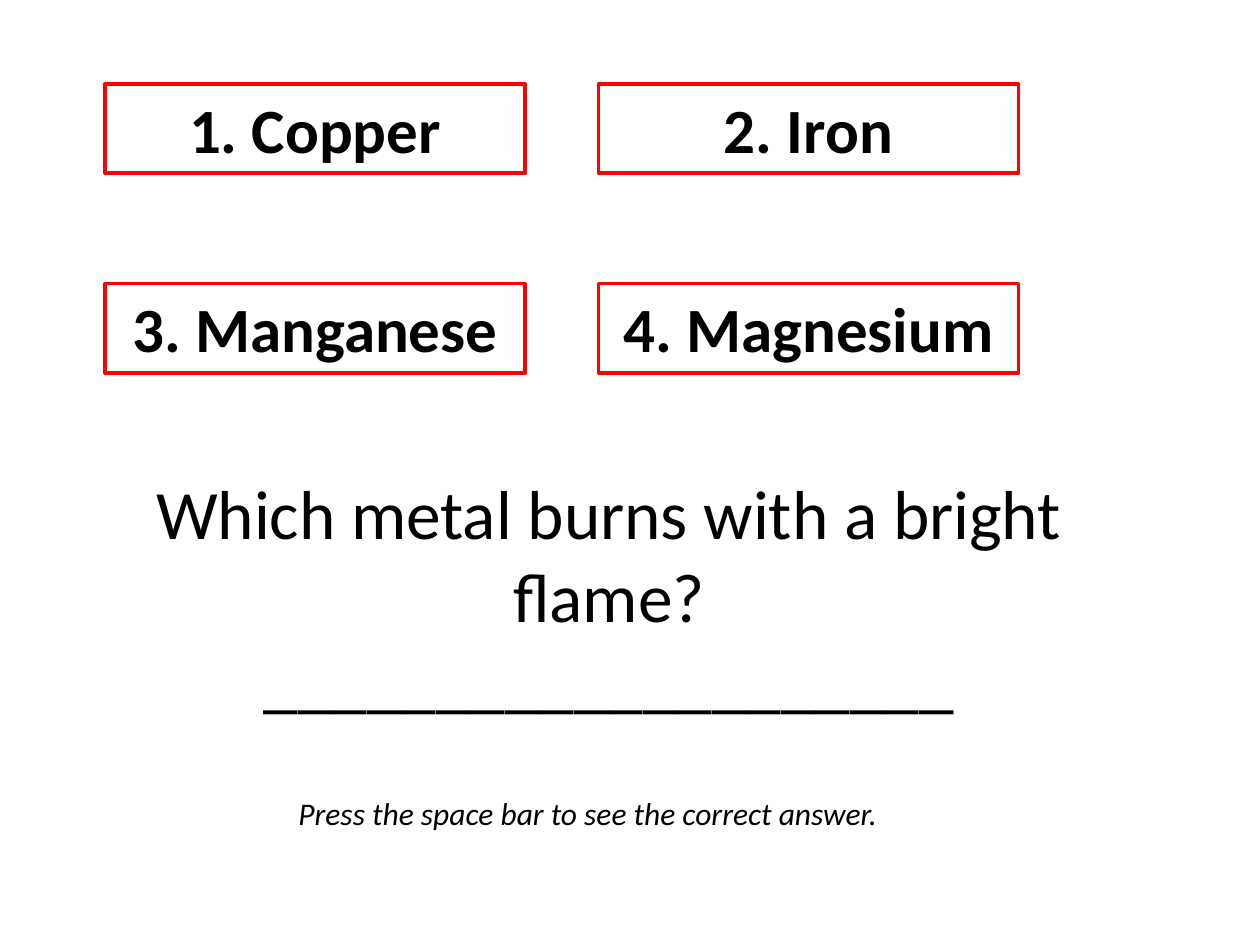
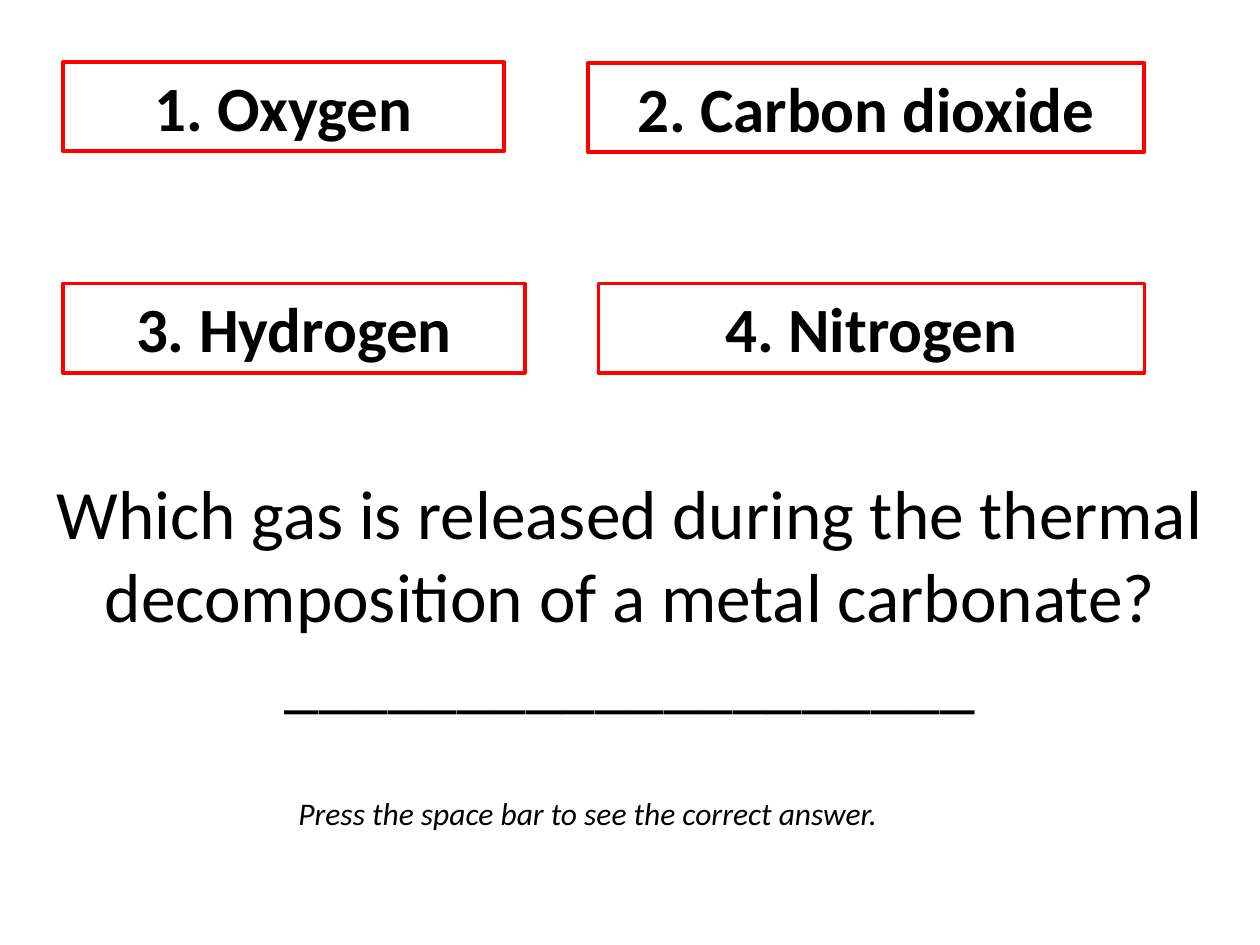
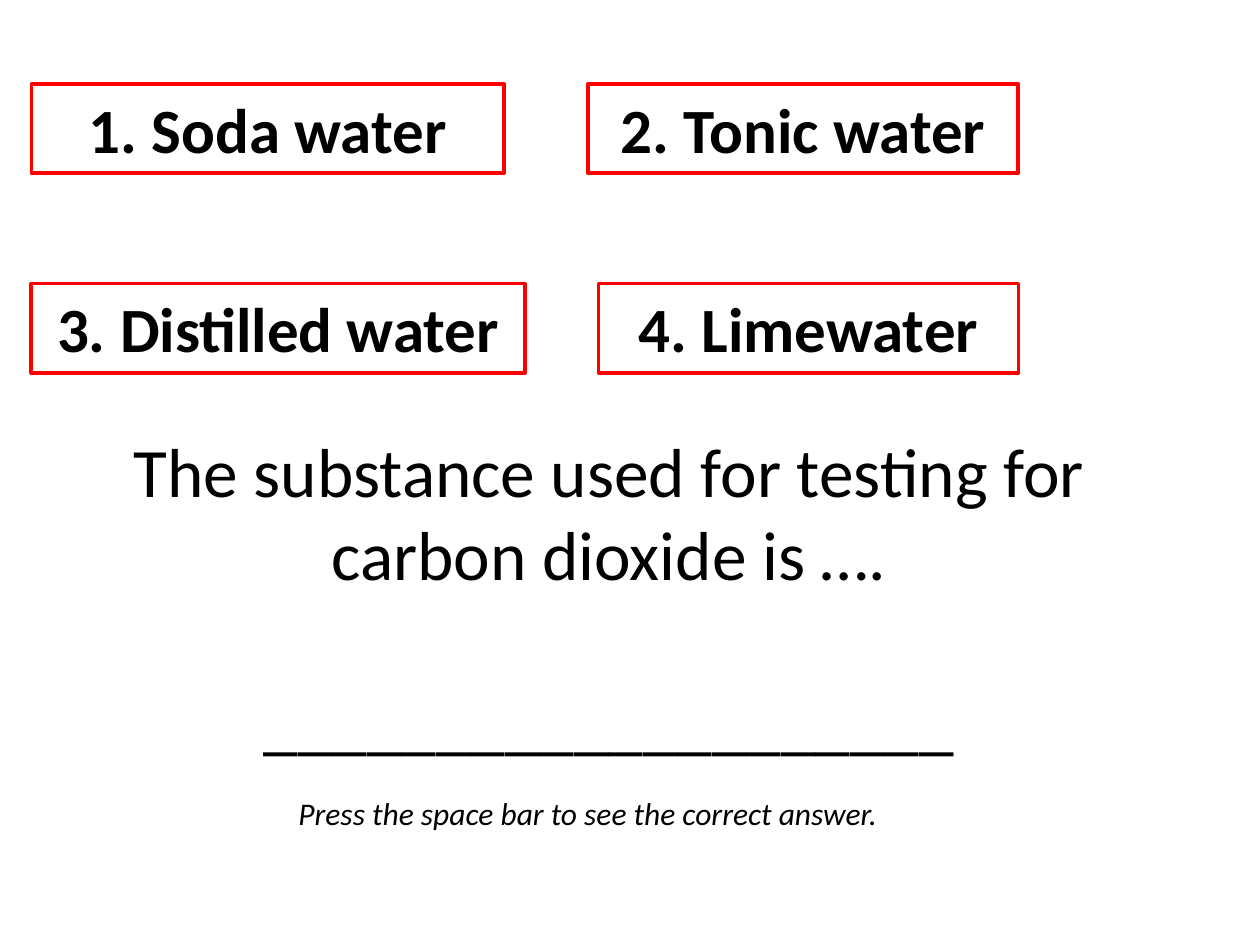
from dataclasses import dataclass
from pptx import Presentation, util as u
from pptx.dml.color import RGBColor
from pptx.enum import shapes, text


@dataclass(frozen=True)
class Theme:
    font: str = "Calibri"
    ink: RGBColor = RGBColor(0, 0, 0)
    edge: RGBColor = RGBColor(255, 0, 0)
    rule: float = 2.25
    ask: float = 39.6
    pick: float = 36
    hint: float = 18


THEME = Theme()
WIDE, HIGH = u.Inches(10), u.Inches(7.5)
COLS, ROWS = 120, 90
PICK_HIGH = 8.5
LOW_ROW = 27
BLANK = "_" * 20
HINT = "Press the space bar to see the correct answer."
HINT_BOX = (15, 75, 82, 4.8)

QUIZ = [
    dict(
        ask="Which metal burns with a bright flame?",
        box=(7, 47, 102, 19.3), gap=0,
        picks=[("1. Copper", 10, 8, 40), ("2. Iron", 57, 8, 40),
               ("3. Manganese", 10, LOW_ROW, 40),
               ("4. Magnesium", 57, LOW_ROW, 40)],
    ),
    dict(
        ask="Which gas is released during the thermal "
            "decomposition of a metal carbonate?",
        box=(3, 47, 114, 19.3), gap=0,
        picks=[("1. Oxygen", 6, 5.9, 42), ("2. Carbon dioxide", 56, 6, 53),
               ("3. Hydrogen", 6, LOW_ROW, 44),
               ("4. Nitrogen", 57, LOW_ROW, 52)],
    ),
    dict(
        ask="The substance used for testing for carbon dioxide is ….",
        box=(7, 47, 102, 19.3), gap=48,
        picks=[("1. Soda water", 3, 8, 45), ("2. Tonic water", 56, 8, 41),
               ("3. Distilled water", 3, LOW_ROW, 47),
               ("4. Limewater", 57, LOW_ROW, 40)],
    ),
]


def place(box):
    col, row, wide, high = box
    return (round(col * WIDE / COLS), round(row * HIGH / ROWS),
            round(wide * WIDE / COLS), round(high * HIGH / ROWS))


def setup(frame, anchor):
    frame.word_wrap = True
    frame.auto_size = text.MSO_AUTO_SIZE.NONE
    frame.vertical_anchor = anchor


def write(para, words, size, bold=False, slant=False):
    para.alignment = text.PP_ALIGN.CENTER
    run = para.add_run()
    run.text = words
    font = run.font
    font.name, font.size = THEME.font, u.Pt(size)
    font.bold, font.italic = bold, slant
    font.color.rgb = THEME.ink


def add_ask(slide, words, box, gap):
    title = slide.shapes.title
    title.left, title.top, title.width, title.height = place(box)
    frame = title.text_frame
    setup(frame, text.MSO_ANCHOR.MIDDLE)
    write(frame.paragraphs[0], words, THEME.ask)
    line = frame.add_paragraph()
    line.space_before = u.Pt(gap)
    write(line, BLANK, THEME.ask)


def add_pick(slide, words, box):
    pick = slide.shapes.add_shape(shapes.MSO_SHAPE.RECTANGLE, *place(box))
    pick.shadow.inherit = False
    pick.fill.background()
    pick.line.color.rgb = THEME.edge
    pick.line.width = u.Pt(THEME.rule)
    setup(pick.text_frame, text.MSO_ANCHOR.TOP)
    write(pick.text_frame.paragraphs[0], words, THEME.pick, bold=True)


def add_hint(slide, box):
    frame = slide.shapes.add_textbox(*place(box)).text_frame
    setup(frame, text.MSO_ANCHOR.TOP)
    write(frame.paragraphs[0], HINT, THEME.hint, slant=True)


def add_quiz(deck, ask, box, gap, picks):
    slide = deck.slides.add_slide(deck.slide_layouts[5])
    add_ask(slide, ask, box, gap)
    for words, col, row, wide in picks:
        add_pick(slide, words, (col, row, wide, PICK_HIGH))
    add_hint(slide, HINT_BOX)


def main():
    deck = Presentation()
    deck.slide_width, deck.slide_height = WIDE, HIGH
    for quiz in QUIZ:
        add_quiz(deck, **quiz)
    deck.save("out.pptx")


if __name__ == "__main__":
    main()
